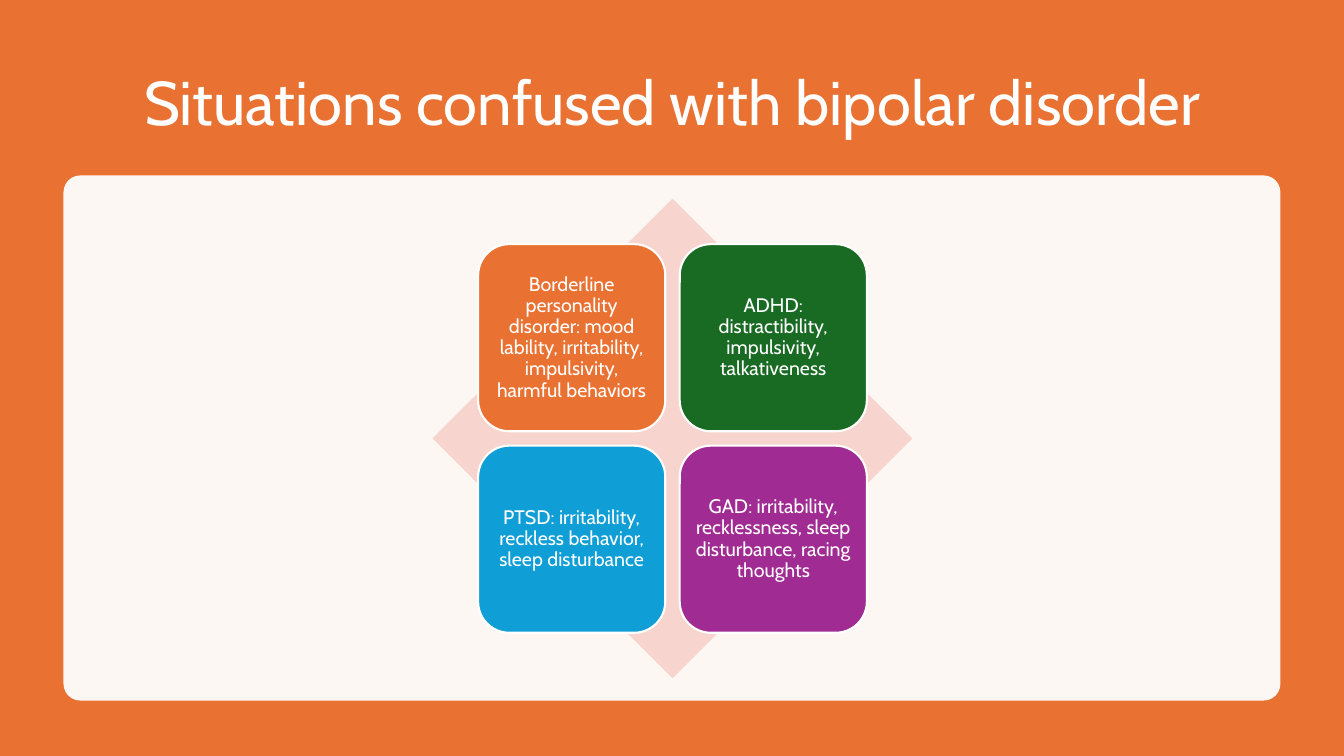
import pptx
import pptx.dml.color
import pptx.enum.shapes
import pptx.enum.text
import pptx.oxml.ns
import pptx.util
from lxml import etree

WIDTH, HEIGHT = 13.33, 7.5
FONT = "Cabin"
SHAPES = pptx.enum.shapes.MSO_SHAPE
CONDITIONS = [
    ("Borderline personality disorder: mood lability, irritability, impulsivity, harmful behaviors", "E97132"),
    ("ADHD: distractibility, impulsivity, talkativeness", "196B24"),
    ("PTSD: irritability, reckless behavior, sleep disturbance", "0F9ED5"),
    ("GAD: irritability, recklessness, sleep disturbance, racing thoughts", "A02B93"),
]


def color(hex_code):
    """Turn a hex string into a colour."""
    return pptx.dml.color.RGBColor.from_string(hex_code)


def inches(box):
    """Turn a box in inches into lengths."""
    return [pptx.util.Inches(length) for length in box]


def add_block(slide, preset, box, fill):
    """Add a flat preset shape without outline."""
    block = slide.shapes.add_shape(preset, *inches(box))
    block.shadow.inherit = False
    block.fill.solid()
    block.fill.fore_color.rgb = color(fill)
    block.line.fill.background()
    return block


def write(frame, words, size, inset):
    """Write one centred white paragraph into a text frame."""
    frame.word_wrap = True
    frame.vertical_anchor = pptx.enum.text.MSO_ANCHOR.MIDDLE
    frame.margin_left = frame.margin_right = pptx.util.Inches(inset)
    frame.margin_top = frame.margin_bottom = pptx.util.Inches(inset)
    paragraph = frame.paragraphs[0]
    paragraph.alignment = pptx.enum.text.PP_ALIGN.CENTER
    paragraph.line_spacing = 0.9
    run = paragraph.add_run()
    run.text = words
    run.font.name = FONT
    run.font.size = pptx.util.Pt(size)
    run.font.color.rgb = color("FFFFFF")


def add_title(slide, box):
    """Place the slide title in its box."""
    title = slide.shapes.add_textbox(*inches(box))
    write(title.text_frame, "Situations confused with bipolar disorder", 44, 0.05)


def add_panel(slide, box):
    """Place the slightly transparent white panel."""
    panel = add_block(slide, SHAPES.ROUNDED_RECTANGLE, box, "FFFFFF")
    panel.adjustments[0] = 0.032
    white = panel.fill._xPr.find(".//" + pptx.oxml.ns.qn("a:srgbClr"))
    etree.SubElement(white, pptx.oxml.ns.qn("a:alpha"), val="95000")


def add_matrix(slide, box):
    """Place a diamond with a two by two grid of conditions."""
    left, top, side, _ = box
    add_block(slide, SHAPES.DIAMOND, box, "F7D5CE")
    margin, tile = side * 0.095, side * 0.39
    step = side - 2 * margin - tile
    for index, (words, fill) in enumerate(CONDITIONS):
        row, column = divmod(index, 2)
        place = (left + margin + column * step, top + margin + row * step, tile, tile)
        condition = add_block(slide, SHAPES.ROUNDED_RECTANGLE, place, fill)
        condition.line.color.rgb = color("FFFFFF")
        condition.line.width = pptx.util.Pt(1.5)
        write(condition.text_frame, words, 14, 0.06)


def main():
    """Build the slide and save it."""
    deck = pptx.Presentation()
    deck.slide_width, deck.slide_height = inches((WIDTH, HEIGHT))
    slide = deck.slides.add_slide(deck.slide_layouts[6])
    add_block(slide, SHAPES.RECTANGLE, (0, 0, WIDTH, HEIGHT), "E97132")
    add_title(slide, (0.92, 0.5, 11.5, 1.1))
    add_panel(slide, (0.63, 1.74, 12.07, 5.21))
    add_matrix(slide, (4.29, 1.97, 4.76, 4.76))
    deck.save("out.pptx")


if __name__ == "__main__":
    main()
